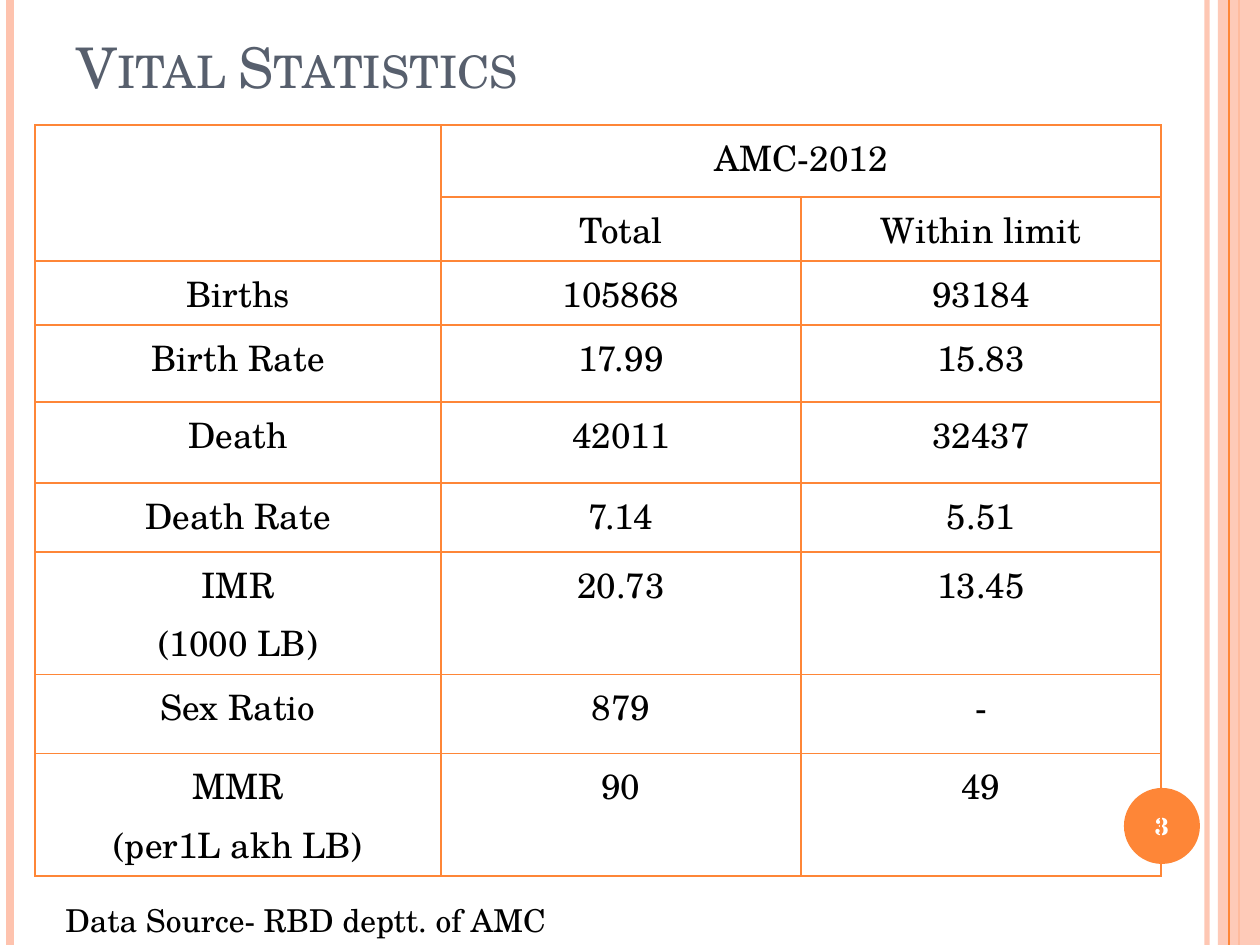
from lxml import etree
from pptx import Presentation
from pptx.dml.color import RGBColor
from pptx.enum.shapes import MSO_CONNECTOR, MSO_SHAPE
from pptx.enum.text import MSO_ANCHOR, MSO_AUTO_SIZE, PP_ALIGN
from pptx.oxml.ns import qn
from pptx.util import Emu, Pt

STRAIGHT = MSO_CONNECTOR.STRAIGHT
RECTANGLE, OVAL = MSO_SHAPE.RECTANGLE, MSO_SHAPE.OVAL
LEFT, CENTER = PP_ALIGN.LEFT, PP_ALIGN.CENTER
TOP, MIDDLE, BOTTOM = MSO_ANCHOR.TOP, MSO_ANCHOR.MIDDLE, MSO_ANCHOR.BOTTOM
GROW, FIXED = MSO_AUTO_SIZE.SHAPE_TO_FIT_TEXT, MSO_AUTO_SIZE.NONE

FONT = "TeX Gyre Schola"
ORANGE = RGBColor(0xFE, 0x86, 0x37)
PEACH = RGBColor(0xFE, 0xC3, 0xAE)
SLATE = RGBColor(0x57, 0x5F, 0x6D)
BLACK = RGBColor(0, 0, 0)
WHITE = RGBColor(255, 255, 255)

PX_PER_INCH = 126
PAGE_WIDTH, PAGE_HEIGHT = 1260, 945
COLUMN_WIDTHS = [406, 360, 360]
ROW_HEIGHTS = [72, 55, 64, 77, 81, 69, 101, 79, 101]
STATISTICS = [
    ["", "AMC-2012", ""],
    ["", "Total", "Within limit"],
    ["Births", "105868", "93184"],
    ["Birth Rate", "17.99", "15.83"],
    ["Death", "42011", "32437"],
    ["Death Rate", "7.14", "5.51"],
    ["IMR\n(1000 LB)", "20.73", "13.45"],
    ["Sex Ratio", "879", "-"],
    ["MMR\n(per1L akh LB)", "90", "49"],
]
STRIPES = [
    (1207, PEACH, 3, 93),
    (10, PEACH, 4.5, 100),
    (1239, ORANGE, 1.5, 100),
]


def px(length):
    """Turn pixels into EMU."""
    return Emu(round(length * 914400 / PX_PER_INCH))


def set_opacity(shape, percent):
    """Make the first solid colour of a shape partly transparent."""
    color = next(shape.element.spPr.iter(qn("a:srgbClr")))
    etree.SubElement(color, qn("a:alpha"), val=str(percent * 1000))


def add_stripe(page, x, color, width, opacity=100):
    """Add a full-height vertical line."""
    line = page.shapes.add_connector(STRAIGHT, px(x), 0, px(x), px(PAGE_HEIGHT))
    line.line.color.rgb = color
    line.line.width = Pt(width)
    if opacity < 100:
        set_opacity(line, opacity)
    etree.SubElement(line.element.spPr, qn("a:effectLst"))


def add_block(page, kind, bounds, color):
    """Add a filled shape without an outline."""
    shape = page.shapes.add_shape(kind, *map(px, bounds))
    shape.fill.solid()
    shape.fill.fore_color.rgb = color
    shape.line.fill.background()
    shape.shadow.inherit = False
    return shape


def write(frame, text, size, color, align=LEFT, bold=False):
    """Set and format all the text of a frame."""
    frame.text = text
    frame.word_wrap = True
    for para in frame.paragraphs:
        para.alignment = align
        for span in para.runs:
            span.font.name = FONT
            span.font.size = Pt(size)
            span.font.bold = bold
            span.font.color.rgb = color


def add_title(page, text):
    """Place the title in small capitals."""
    title = page.shapes.title
    title.left, title.top, title.width, title.height = map(px, (64, 0, 1029, 106))
    frame = title.text_frame
    write(frame, text, 32, SLATE)
    frame.vertical_anchor = BOTTOM
    frame.auto_size = FIXED
    for span in frame.paragraphs[0].runs:
        span.font._element.set("cap", "small")


def add_label(page, text, bounds, size, color, align=LEFT, bold=False, anchor=TOP, fit=FIXED):
    """Add a wrapped text box."""
    frame = page.shapes.add_textbox(*map(px, bounds)).text_frame
    write(frame, text, size, color, align, bold)
    frame.vertical_anchor = anchor
    frame.auto_size = fit


def outline_cell(cell):
    """Draw all four borders of a cell and leave it unfilled."""
    properties = cell._tc.get_or_add_tcPr()
    for side in ("lnL", "lnR", "lnT", "lnB"):
        border = etree.SubElement(properties, qn(f"a:{side}"), w=str(Pt(1)))
        fill = etree.SubElement(border, qn("a:solidFill"))
        etree.SubElement(fill, qn("a:srgbClr"), val=str(ORANGE))
    cell.fill.background()


def add_statistics(page):
    """Add the table of vital statistics."""
    bounds = (35, 125, sum(COLUMN_WIDTHS), sum(ROW_HEIGHTS))
    table = page.shapes.add_table(
        len(ROW_HEIGHTS), len(COLUMN_WIDTHS), *map(px, bounds)
    ).table
    table.first_row = table.horz_banding = False
    for column, width in zip(table.columns, COLUMN_WIDTHS):
        column.width = px(width)
    for row, height, texts in zip(table.rows, ROW_HEIGHTS, STATISTICS):
        row.height = px(height)
        for cell, text in zip(row.cells, texts):
            write(cell.text_frame, text, 20, BLACK, CENTER)
            for para in cell.text_frame.paragraphs:
                para.space_before = Pt(4)
            outline_cell(cell)
    table.cell(0, 0).merge(table.cell(1, 0))
    table.cell(0, 1).merge(table.cell(0, 2))


def main():
    """Build and save the slide."""
    deck = Presentation()
    deck.slide_width, deck.slide_height = px(PAGE_WIDTH), px(PAGE_HEIGHT)
    page = deck.slides.add_slide(deck.slide_layouts[5])
    for stripe in STRIPES:
        add_stripe(page, *stripe)
    band = add_block(page, RECTANGLE, (1218, 0, 42, PAGE_HEIGHT), PEACH)
    set_opacity(band, 87)
    add_stripe(page, 1229, ORANGE, 0.75)
    add_block(page, OVAL, (1124, 788, 76, 76), ORANGE)
    add_title(page, "Vital Statistics")
    add_label(page, "3", (1120, 790, 84, 72), 14, WHITE, CENTER, True, MIDDLE)
    add_statistics(page)
    add_label(page, "Data Source- RBD deptt. of AMC", (53, 895, 872, 50), 18, BLACK, fit=GROW)
    deck.save("out.pptx")


if __name__ == "__main__":
    main()
